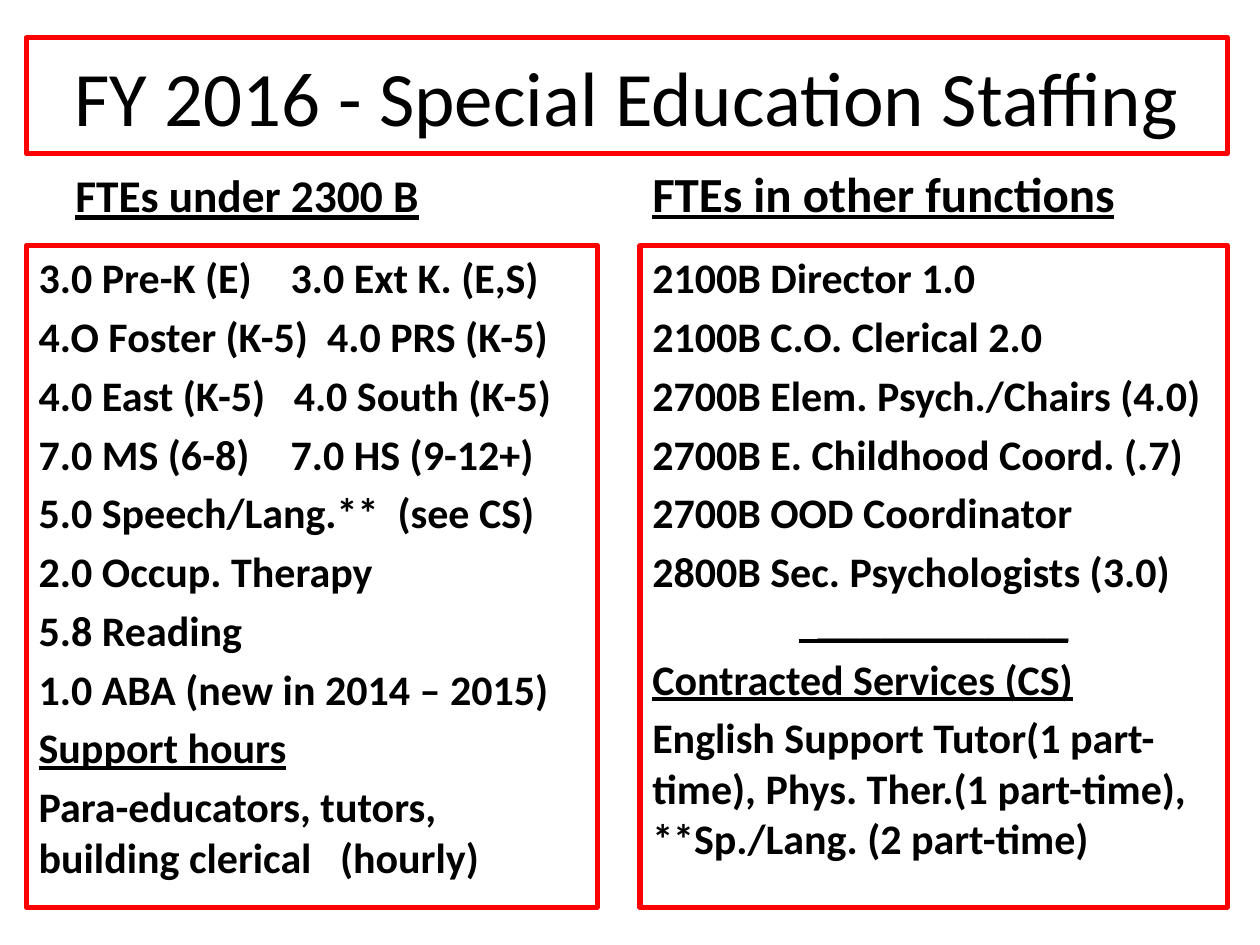
from pptx import Presentation
from pptx.dml.color import RGBColor
from pptx.enum.text import MSO_ANCHOR, PP_ALIGN
from pptx.util import Cm, Pt

COLORS = {"text": "000000", "frame": "FF0000"}
FONT = "Calibri"
UNDERLINED = {"Support hours", "Contracted Services (CS)", "  ____________"}

COLUMNS = [
    {
        "heading": "FTEs under 2300 B", "heading_left": 1.27, "heading_size": 25.9,
        "left": 0.53, "width": 11.51,
        "lines": [
            "3.0 Pre-K (E)\t3.0 Ext K. (E,S)",
            "4.O Foster (K-5)  4.0 PRS (K-5)",
            "4.0 East (K-5)   4.0 South (K-5)",
            "7.0 MS (6-8)\t7.0 HS (9-12+)",
            "5.0 Speech/Lang.**  (see CS)",
            "2.0 Occup. Therapy",
            "5.8 Reading",
            "1.0 ABA (new in 2014 – 2015)",
            "Support hours",
            "Para-educators, tutors, building clerical   (hourly)",
        ],
    },
    {
        "heading": "FTEs in other functions", "heading_left": 12.9, "heading_size": 28,
        "left": 12.9, "width": 11.84,
        "lines": [
            "2100B Director 1.0",
            "2100B C.O. Clerical 2.0",
            "2700B Elem. Psych./Chairs (4.0)",
            "2700B E. Childhood Coord. (.7)",
            "2700B OOD Coordinator",
            "2800B Sec. Psychologists (3.0)",
            "  ____________",
            "Contracted Services (CS)",
            "English Support Tutor(1 part-time), Phys. Ther.(1 part-time), "
            "**Sp./Lang. (2 part-time)",
        ],
    },
]


def add_line(p, text, size, **formats):
    r = p.add_run()
    r.text = text
    r.font.color.rgb = RGBColor.from_string(COLORS["text"])
    for name, value in {"name": FONT, "size": Pt(size), **formats}.items():
        setattr(r.font, name, value)


def add_frame(sp):
    """Outline a shape in the slide's frame colour."""
    sp.line.color.rgb = RGBColor.from_string(COLORS["frame"])
    sp.line.width = Pt(3)


prs = Presentation()
prs.slide_width, prs.slide_height = Cm(25.4), Cm(19.05)
s = prs.slides.add_slide(prs.slide_layouts[5])

title = s.shapes.title
title.left, title.top, title.width, title.height = Cm(0.53), Cm(0.76), Cm(24.21), Cm(2.34)
add_frame(title)
title.text_frame.vertical_anchor = MSO_ANCHOR.MIDDLE
p = title.text_frame.paragraphs[0]
p.alignment = PP_ALIGN.CENTER
add_line(p, "FY 2016 - Special Education Staffing", 44)

for column in COLUMNS:
    heading = s.shapes.add_textbox(Cm(column["heading_left"]), Cm(3.43), Cm(11.23), Cm(1.17))
    tf = heading.text_frame
    tf.word_wrap = True
    tf.vertical_anchor = MSO_ANCHOR.BOTTOM
    add_line(tf.paragraphs[0], column["heading"], column["heading_size"],
             bold=True, underline=True)

    box = s.shapes.add_textbox(Cm(column["left"]), Cm(4.95), Cm(column["width"]), Cm(13.34))
    add_frame(box)
    tf = box.text_frame
    tf.word_wrap = True
    for i, text in enumerate(column["lines"]):
        p = tf.add_paragraph() if i else tf.paragraphs[0]
        p.space_before = Pt(4.8)
        if "____" in text:
            p.alignment = PP_ALIGN.CENTER
            p.line_spacing = 0.8
        add_line(p, text, 24, bold=True, underline=text in UNDERLINED)

prs.save("out.pptx")
